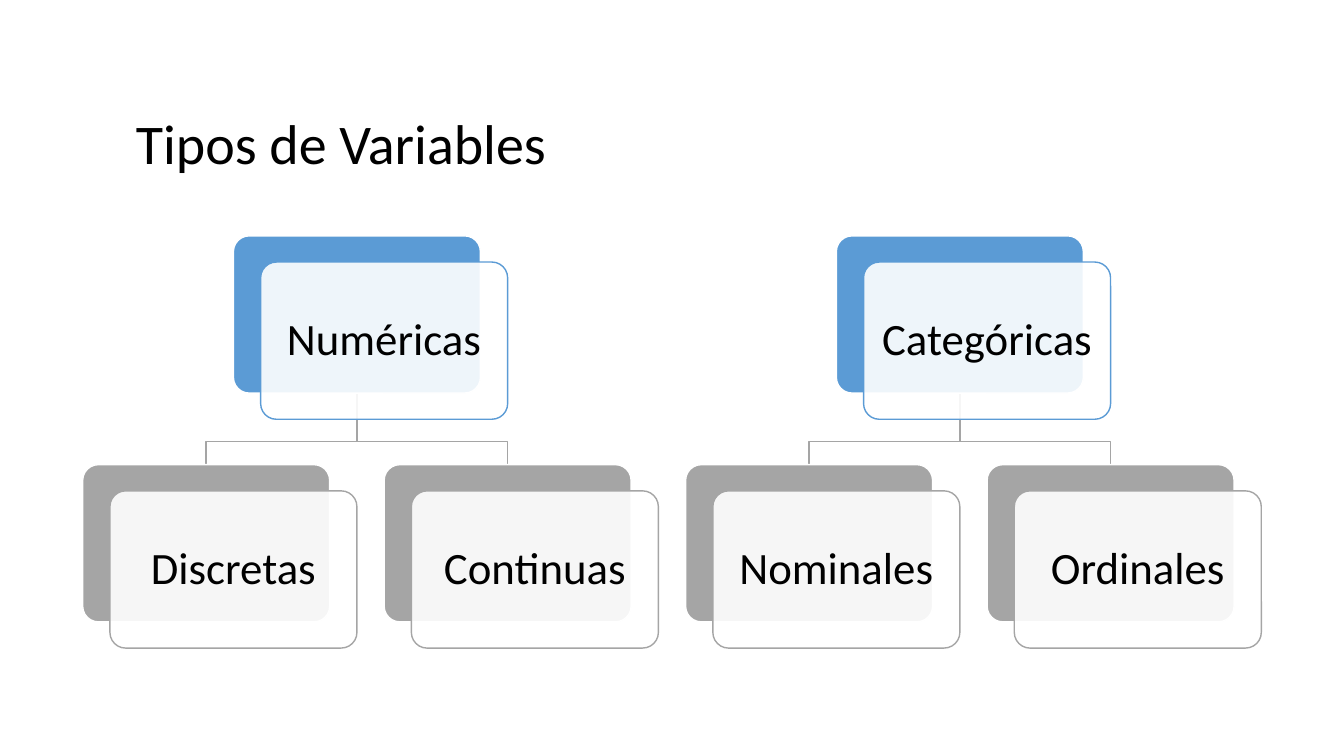
from lxml import etree
from pptx import Presentation
from pptx.dml.color import RGBColor
from pptx.enum.shapes import MSO_SHAPE as Shape
from pptx.enum.text import MSO_ANCHOR as Anchor, PP_ALIGN as Align
from pptx.oxml.ns import qn
from pptx.util import Inches, Pt

BLACK = RGBColor(0x00, 0x00, 0x00)
WHITE = RGBColor(0xFF, 0xFF, 0xFF)
BLUE = RGBColor(0x5B, 0x9B, 0xD5)
GRAY = RGBColor(0xA5, 0xA5, 0xA5)

CARD_WIDTH, CARD_HEIGHT = 2.45, 1.56
SHIFT_X, SHIFT_Y = 0.27, 0.26
LEFT, COLUMN_STEP = 0.82, 2.99
PARENT_TOP, CHILD_TOP = 2.34, 4.61
BEND_Y = 4.38
TREE = {
    "Numéricas": ["Discretas", "Continuas"],
    "Categóricas": ["Nominales", "Ordinales"],
}


def write(shape, text, size, align):
    frame = shape.text_frame
    frame.word_wrap = True
    frame.vertical_anchor = Anchor.MIDDLE
    para = frame.paragraphs[0]
    para.alignment = align
    para.line_spacing = 0.9
    span = para.add_run()
    span.text = text
    for name, value in {"name": "Calibri", "size": Pt(size)}.items():
        setattr(span.font, name, value)
    span.font.color.rgb = BLACK


def add_card(left, top, text, color):
    """Draw a solid back plate and, shifted over it, a translucent labelled front."""
    for shift, fill, line in ((0, color, WHITE), (1, WHITE, color)):
        plate = page.shapes.add_shape(
            Shape.ROUNDED_RECTANGLE,
            Inches(left + shift * SHIFT_X), Inches(top + shift * SHIFT_Y),
            Inches(CARD_WIDTH), Inches(CARD_HEIGHT))
        plate.adjustments[0] = 0.1
        plate.shadow.inherit = False
        plate.fill.solid()
        plate.fill.fore_color.rgb = fill
        plate.line.color.rgb = line
        plate.line.width = Pt(1)
    tint = plate.fill._xPr.find(qn("a:solidFill"))[0]
    etree.SubElement(tint, qn("a:alpha")).set("val", "90000")
    write(plate, text, 32, Align.CENTER)


deck = Presentation()
deck.slide_width, deck.slide_height = Inches(13.33), Inches(7.5)
page = deck.slides.add_slide(deck.slide_layouts[6])

title = page.shapes.add_textbox(Inches(1.25), Inches(1.08), Inches(10.83), Inches(0.75))
write(title, "Tipos de Variables", 40, Align.LEFT)

for branch, (parent, children) in enumerate(TREE.items()):
    child_lefts = [LEFT + COLUMN_STEP * (2 * branch + side) for side in range(2)]
    parent_left = sum(child_lefts) / 2
    parent_x = parent_left + CARD_WIDTH / 2

    for child_left in child_lefts:
        child_x = child_left + CARD_WIDTH / 2
        outline = page.shapes.build_freeform(
            Inches(parent_x), Inches(PARENT_TOP + CARD_HEIGHT))
        corners = [(parent_x, BEND_Y), (child_x, BEND_Y), (child_x, CHILD_TOP)]
        outline.add_line_segments(
            [(Inches(x), Inches(y)) for x, y in corners], close=False)
        link = outline.convert_to_shape()
        link.shadow.inherit = False
        link.fill.background()
        link.line.color.rgb = GRAY
        link.line.width = Pt(1)

    add_card(parent_left, PARENT_TOP, parent, BLUE)
    for child_left, child in zip(child_lefts, children):
        add_card(child_left, CHILD_TOP, child, GRAY)

deck.save("out.pptx")
